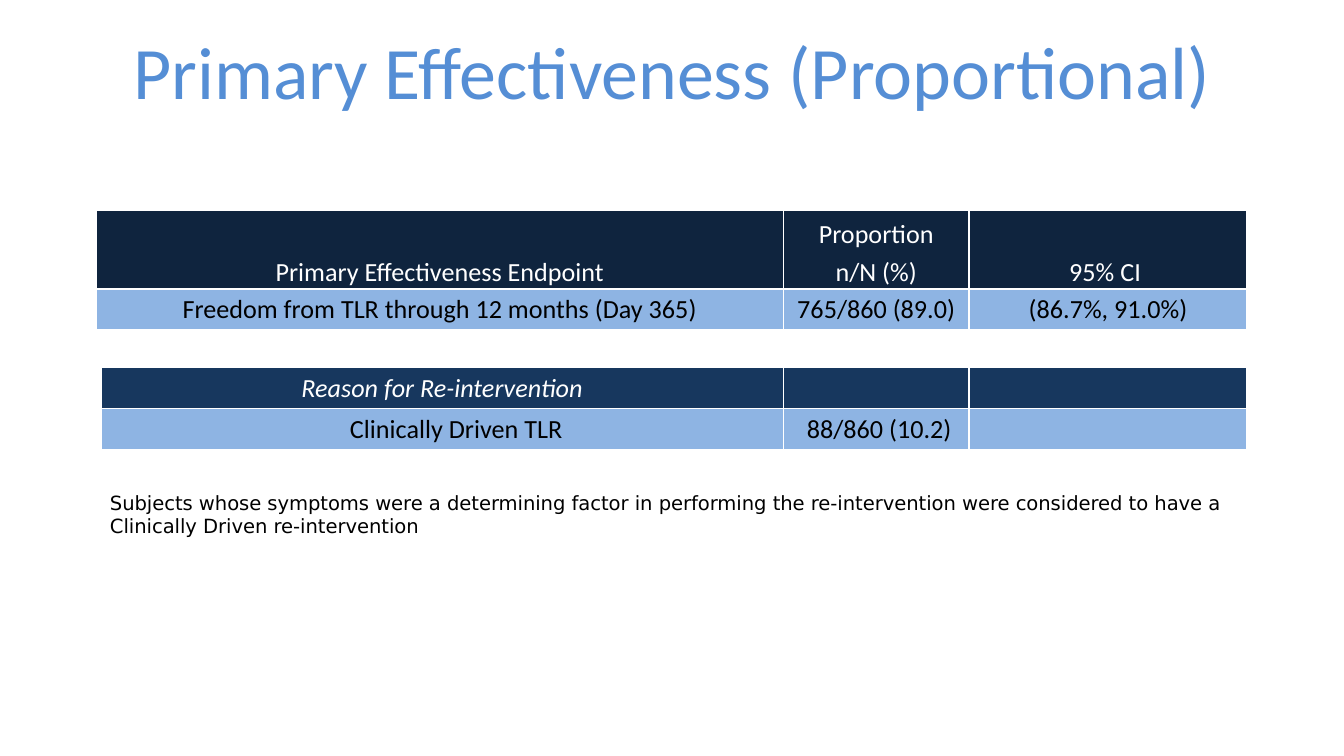
import pptx
import pptx.dml.color
import pptx.enum.text
import pptx.oxml
import pptx.oxml.ns
import pptx.util

THEME = {
    "font": "Calibri", "note_font": "DejaVu Sans",
    "title_size": 39.6, "cell_size": 14, "note_size": 10.5,
    "title": "558ED5", "white": "FFFFFF", "black": "000000",
    "endpoint_head": "0F243E", "reason_head": "17375E", "row": "8EB4E3",
}
ALIGN = pptx.enum.text.PP_ALIGN
ANCHOR = pptx.enum.text.MSO_ANCHOR

deck = pptx.Presentation()
deck.slide_width = pptx.util.Inches(10)
deck.slide_height = deck.slide_width * 9 // 16
W = deck.slide_width / 100
H = deck.slide_height / 100
slide = deck.slides.add_slide(deck.slide_layouts[6])


def write(paragraph, text, font, size, color, italic=False):
    run = paragraph.add_run()
    run.text = text
    run.font.name = font
    run.font.size = pptx.util.Pt(size)
    run.font.italic = italic
    run.font.color.rgb = pptx.dml.color.RGBColor.from_string(THEME[color])


def outline(cell):
    """Draw a thin white border on all four sides of a cell."""
    properties = cell._tc.get_or_add_tcPr()
    for position, side in enumerate(("lnL", "lnR", "lnT", "lnB")):
        properties.insert(position, pptx.oxml.parse_xml(
            f'<a:{side} {pptx.oxml.ns.nsdecls("a")} w="12700"><a:solidFill>'
            f'<a:srgbClr val="{THEME["white"]}"/></a:solidFill></a:{side}>'))


# Both tables share the right edge and the two value columns.
right_edge = 92.8
value_columns = [13.8, 20.7]
row_height = 5.45
tables = [
    {"left": 7.17, "top": 27.8, "head": "endpoint_head", "head_height": 10.4, "italic": False,
     "rows": [["Primary Effectiveness Endpoint", "Proportion\nn/N (%)", "95% CI "],
              ["Freedom from TLR through 12 months (Day 365)", "765/860 (89.0)", "(86.7%, 91.0%)"]],
     "indents": {}},
    {"left": 7.5, "top": 48.6, "head": "reason_head", "head_height": row_height, "italic": True,
     "rows": [["Reason for Re-intervention", "", ""],
              ["Clinically Driven TLR", " 88/860 (10.2)", ""]],
     "indents": {(1, 0): 0.21}},
]

for part in tables:
    width = right_edge - part["left"]
    columns = [width - sum(value_columns)] + value_columns
    heights = [part["head_height"], row_height]
    table = slide.shapes.add_table(
        len(heights), len(columns), int(part["left"] * W), int(part["top"] * H),
        int(width * W), int(sum(heights) * H)).table
    for column, share in zip(table.columns, columns):
        column.width = int(share * W)
    for r, (labels, share) in enumerate(zip(part["rows"], heights)):
        table.rows[r].height = int(share * H)
        for c, label in enumerate(labels):
            cell = table.cell(r, c)
            cell.margin_left = cell.margin_right = pptx.util.Inches(0.01)
            cell.margin_top = cell.margin_bottom = 0
            cell.vertical_anchor = ANCHOR.TOP if r or part["italic"] else ANCHOR.BOTTOM
            cell.fill.solid()
            cell.fill.fore_color.rgb = pptx.dml.color.RGBColor.from_string(
                THEME["row" if r else part["head"]])
            outline(cell)
            for n, line in enumerate(label.split("\n") if label else []):
                paragraph = cell.text_frame.add_paragraph() if n else cell.text_frame.paragraphs[0]
                paragraph.alignment = ALIGN.CENTER
                paragraph.line_spacing = 1.15
                paragraph.space_after = pptx.util.Pt(0.5)
                if n:
                    paragraph.space_before = pptx.util.Pt(0.5)
                if (r, c) in part["indents"]:
                    indent = pptx.util.Inches(part["indents"][r, c])
                    paragraph._p.get_or_add_pPr().set("marL", str(indent))
                write(paragraph, line, THEME["font"], THEME["cell_size"],
                      "black" if r else "white", part["italic"] and r == 0)

title = slide.shapes.add_textbox(int(5 * W), int(4 * H), int(90 * W), int(10.5 * H)).text_frame
title.word_wrap = True
title.vertical_anchor = ANCHOR.MIDDLE
title.paragraphs[0].alignment = ALIGN.CENTER
write(title.paragraphs[0], "Primary Effectiveness (Proportional)",
      THEME["font"], THEME["title_size"], "title")

note = slide.shapes.add_textbox(int(7.2 * W), int(64 * H), int(85.6 * W), int(8 * H)).text_frame
note.word_wrap = True
write(note.paragraphs[0],
      "Subjects whose symptoms were a determining factor in performing the re-intervention "
      "were considered to have a Clinically Driven re-intervention",
      THEME["note_font"], THEME["note_size"], "black")

deck.save("out.pptx")
